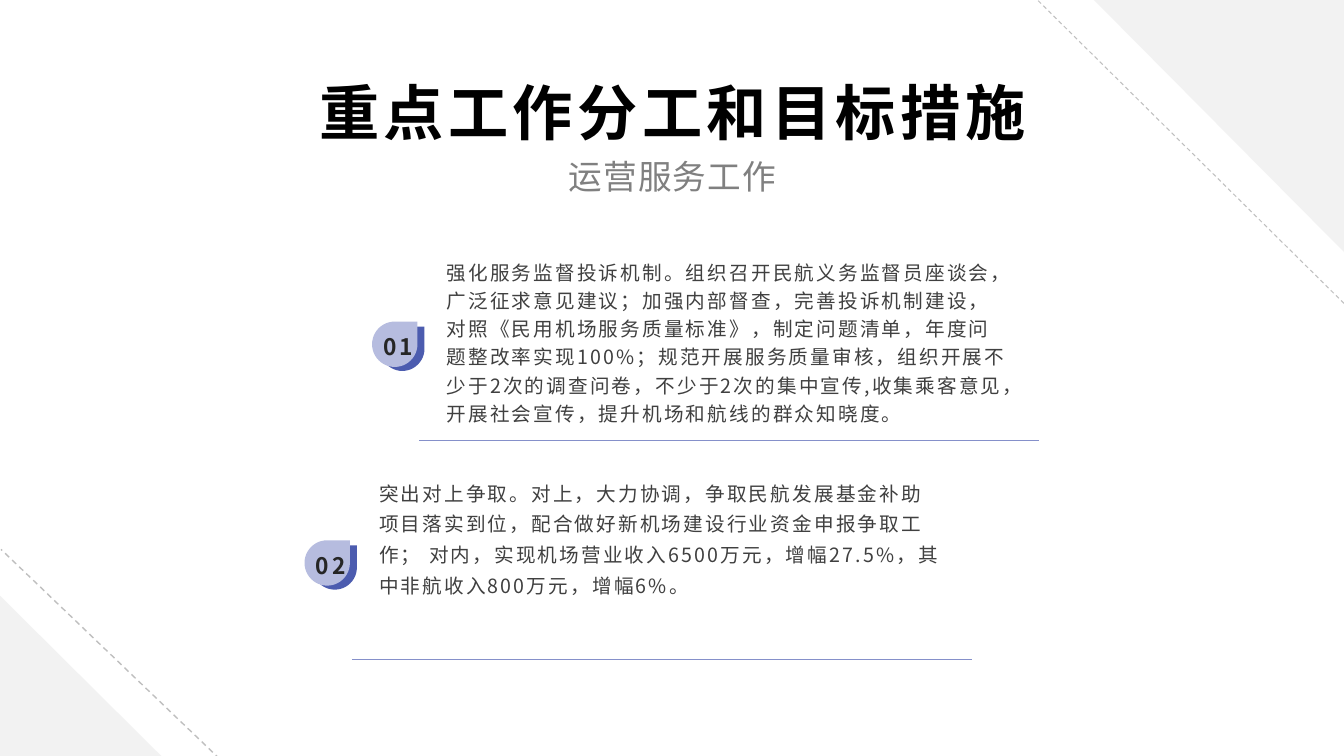
from pptx import Presentation
from pptx import util as u
from pptx.dml.color import RGBColor
from pptx.enum import dml, shapes, text
from pptx.oxml.ns import qn
from lxml import etree

# Content
TITLE = "重点工作分工和目标措施"
SUB = "运营服务工作"
ITEMS = [
    ("01", 1.2, "强化服务监督投诉机制。组织召开民航义务监督员座谈会，广泛征求意见建议；"
     "加强内部督查，完善投诉机制建设，对照《民用机场服务质量标准》，制定问题清单，"
     "年度问题整改率实现100%；规范开展服务质量审核，组织开展不少于2次的调查问卷，"
     "不少于2次的集中宣传,收集乘客意见，开展社会宣传，提升机场和航线的群众知晓度。"),
    ("02", 1.3, "突出对上争取。对上，大力协调，争取民航发展基金补助项目落实到位，"
     "配合做好新机场建设行业资金申报争取工作； 对内，实现机场营业收入6500万元，"
     "增幅27.5%，其中非航收入800万元，增幅6%。"),
]
# Corner decoration: triangle box, turn, dashed line, line width
CORNERS = [
    ((10.85, 0, 2.48, 2.5), 180, (13.33, 3.01, 10.29, 0), 0.75),
    ((0, 5.91, 1.6, 1.59), 0, (2.18, 7.53, 0.01, 5.45), 1),
]
START = (4.43, 2.54)   # first body text
STEP = (-0.67, 2.17)   # shift from one item to the next

THEME = {
    "font": "Noto Sans CJK SC",
    "title": "000000", "sub": "808080", "body": "404040", "num": "262626",
    "deep": "4C5CAF", "pale": "B6BCDF", "rule": "8590CA",
    "corner": "F2F2F2", "dash": "BFBFBF",
    "title_pt": 43, "sub_pt": 24, "body_pt": 14, "num_pt": 16.2,
}

prs = Presentation()
prs.slide_width, prs.slide_height = u.Inches(13.33), u.Inches(7.5)
slide = prs.slides.add_slide(prs.slide_layouts[6])


def inch(vals):
    return [u.Inches(v) for v in vals]


def color(key):
    return RGBColor.from_string(THEME[key])


def write(words, box, role, bold=False, gap=0.0, center=True, lead=None,
          pad=(0, 0), anchor=text.MSO_ANCHOR.TOP):
    frame = slide.shapes.add_textbox(*inch(box)).text_frame
    frame.word_wrap = True
    frame.vertical_anchor = anchor
    frame.margin_left = frame.margin_right = u.Inches(pad[0])
    frame.margin_top = frame.margin_bottom = u.Inches(pad[1])
    para = frame.paragraphs[0]
    para.alignment = text.PP_ALIGN.CENTER if center else text.PP_ALIGN.LEFT
    if lead:
        para.line_spacing = lead
    run = para.add_run()
    run.text = words
    font = run.font
    font.size, font.bold = u.Pt(THEME[role + "_pt"]), bold
    font.color.rgb = color(role)
    font.name = THEME["font"]
    props = run._r.get_or_add_rPr()
    props.set("spc", str(round(gap * 100)))
    etree.SubElement(props, qn("a:ea")).set("typeface", THEME["font"])


def form(home, kind, box, fill):
    shape = home.add_shape(kind, *inch(box))
    shape.shadow.inherit = False
    shape.fill.solid()
    shape.fill.fore_color.rgb = color(fill)
    shape.line.fill.background()
    return shape


def rule(ends, tint, width, dash=None):
    line = slide.shapes.add_connector(shapes.MSO_CONNECTOR.STRAIGHT, *inch(ends))
    line.line.color.rgb = color(tint)
    line.line.width = u.Pt(width)
    if dash:
        line.line.dash_style = dash
    etree.SubElement(line._element.spPr, qn("a:effectLst"))


# Corners
for box, turn, ends, width in CORNERS:
    rule(ends, "dash", width, dml.MSO_LINE.DASH)
    form(slide.shapes, shapes.MSO_SHAPE.RIGHT_TRIANGLE, box, "corner").rotation = turn

# Headings
write(TITLE, (0.67, 0.67, 12, 0.82), "title", bold=True, gap=3.2,
      pad=(0.07, 0.03), anchor=text.MSO_ANCHOR.BOTTOM)
write(SUB, (0.67, 1.52, 12, 0.48), "sub", gap=0.8, pad=(0.07, 0.03))

# Numbered items
for i, (num, lead, body) in enumerate(ITEMS):
    x, y = (a + i * b for a, b in zip(START, STEP))
    write(body, (x, y, 5.61, 1.74), "body", gap=1.5, center=False, lead=lead)
    rule((x - 0.27, y + 1.83, x + 5.88, y + 1.83), "rule", 0.5)
    badge = slide.shapes.add_group_shape().shapes
    drop = shapes.MSO_SHAPE.TEAR
    form(badge, drop, (x - 0.66, y + 0.7, 0.44, 0.44), "deep")
    form(badge, drop, (x - 0.74, y + 0.65, 0.45, 0.45), "pale")
    write(num, (x - 0.67, y + 0.67, 0.38, 0.37), "num", bold=True, gap=2,
          lead=1.3, anchor=text.MSO_ANCHOR.MIDDLE)

prs.save("out.pptx")
